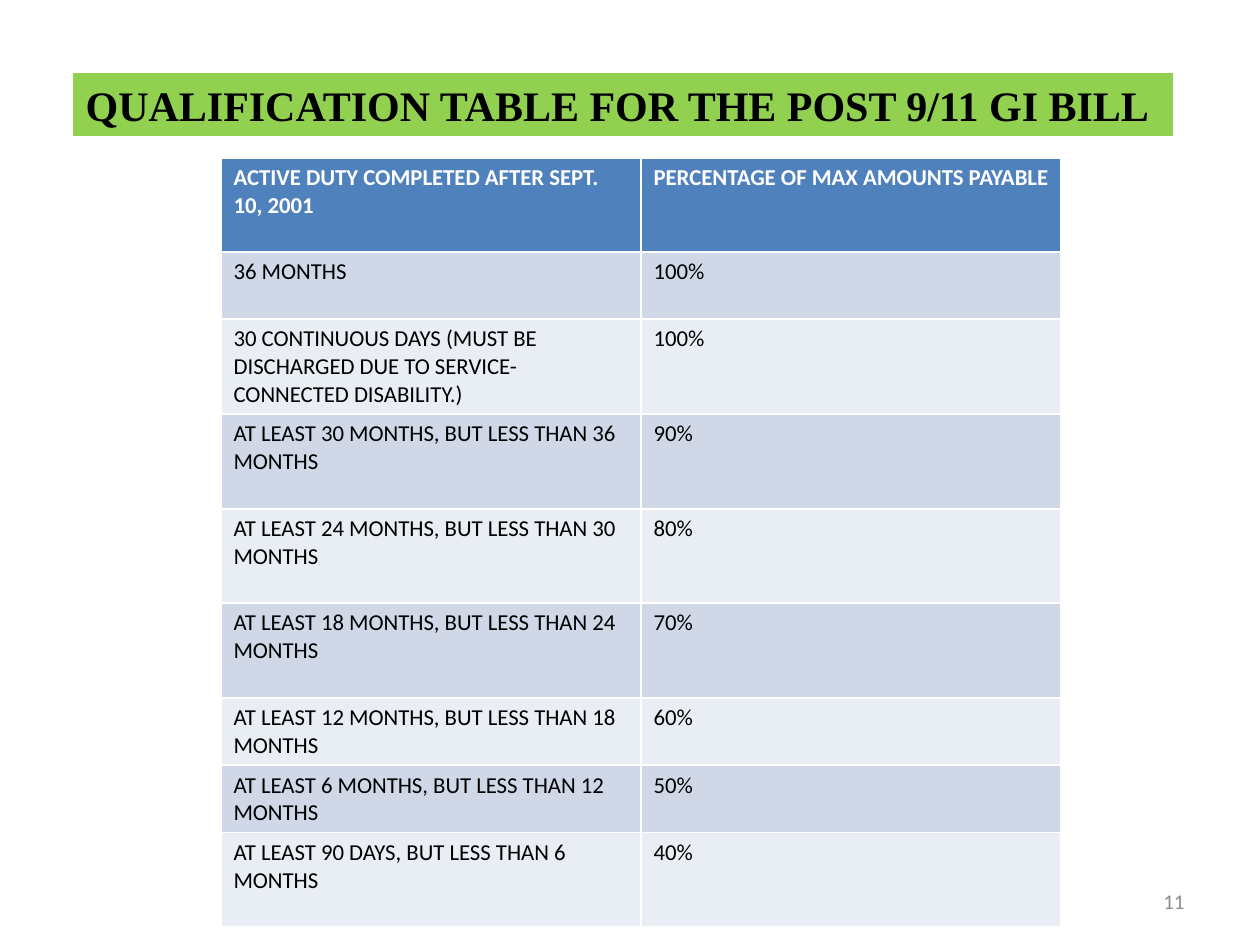
from dataclasses import dataclass

from pptx import Presentation
from pptx.dml.color import RGBColor
from pptx.enum.text import MSO_ANCHOR, MSO_AUTO_SIZE, PP_ALIGN
from pptx.util import Pt

LEFT, RIGHT = PP_ALIGN.LEFT, PP_ALIGN.RIGHT
TOP, MIDDLE = MSO_ANCHOR.TOP, MSO_ANCHOR.MIDDLE
NO_AUTOFIT = MSO_AUTO_SIZE.NONE

PX_PER_INCH = 126
TITLE_ONLY_LAYOUT = 5
COLORS = {
    "title_band": "92D050",
    "header": "4F81BD",
    "odd_row": "D0D8E8",
    "even_row": "E9EDF4",
    "text": "000000",
    "header_text": "FFFFFF",
    "page_number": "8C8C8C",
}


@dataclass(frozen=True)
class Box:
    left: int
    top: int
    width: int
    height: int

    def emu(self) -> tuple[int, ...]:
        return tuple(px(n) for n in (self.left, self.top, self.width, self.height))


@dataclass(frozen=True)
class Tier:
    service: str
    percentage: str
    height: int


TITLE_BOX = Box(73, 73, 1100, 63)
TABLE_BOX = Box(221, 158, 840, 768)
PAGE_NUMBER_BOX = Box(903, 876, 294, 50)

TIERS = [
    Tier("ACTIVE DUTY COMPLETED AFTER SEPT. 10, 2001",
         "PERCENTAGE OF MAX AMOUNTS PAYABLE", 94),
    Tier("36 MONTHS", "100%", 67),
    Tier("30 CONTINUOUS DAYS (MUST BE DISCHARGED DUE TO "
         "SERVICE-CONNECTED DISABILITY.)", "100%", 95),
    Tier("AT LEAST 30 MONTHS, BUT LESS THAN 36 MONTHS", "90%", 95),
    Tier("AT LEAST 24 MONTHS, BUT LESS THAN 30 MONTHS", "80%", 94),
    Tier("AT LEAST 18 MONTHS, BUT LESS THAN 24 MONTHS", "70%", 95),
    Tier("AT LEAST 12 MONTHS, BUT LESS THAN 18 MONTHS", "60%", 67),
    Tier("AT LEAST 6 MONTHS, BUT LESS THAN 12 MONTHS", "50%", 67),
    Tier("AT LEAST 90 DAYS, BUT LESS THAN 6 MONTHS", "40%", 94),
]


def px(length: int) -> int:
    """Turn pixels into EMU."""
    return round(length * 914400 / PX_PER_INCH)


def set_fill(target, color: str) -> None:
    target.fill.solid()
    target.fill.fore_color.rgb = RGBColor.from_string(COLORS[color])


def write(frame, text: str, size: int, color: str, font: str = "Calibri",
          bold: bool = False, align=LEFT) -> None:
    frame.text = text
    paragraph = frame.paragraphs[0]
    paragraph.alignment = align
    paragraph.font.name = font
    paragraph.font.size = Pt(size)
    paragraph.font.bold = bold
    paragraph.font.color.rgb = RGBColor.from_string(COLORS[color])


def add_title(slide) -> None:
    title = slide.shapes.title
    title.left, title.top, title.width, title.height = TITLE_BOX.emu()
    set_fill(title, "title_band")
    frame = title.text_frame
    frame.word_wrap = False
    frame.auto_size = NO_AUTOFIT
    frame.vertical_anchor = TOP
    write(frame, "QUALIFICATION TABLE FOR THE POST 9/11 GI BILL", 24, "text",
          font="Times New Roman", bold=True)


def add_qualification_table(slide) -> None:
    table = slide.shapes.add_table(len(TIERS), 2, *TABLE_BOX.emu()).table
    for index, tier in enumerate(TIERS):
        is_header = index == 0
        band = "header" if is_header else "odd_row" if index % 2 else "even_row"
        table.rows[index].height = px(tier.height)
        for column, text in enumerate((tier.service, tier.percentage)):
            cell = table.cell(index, column)
            set_fill(cell, band)
            write(cell.text_frame, text, 13,
                  "header_text" if is_header else "text", bold=is_header)


def add_page_number(slide) -> None:
    frame = slide.shapes.add_textbox(*PAGE_NUMBER_BOX.emu()).text_frame
    frame.word_wrap = True
    frame.vertical_anchor = MIDDLE
    write(frame, "11", 12, "page_number", align=RIGHT)


def main() -> None:
    presentation = Presentation()
    presentation.slide_width, presentation.slide_height = px(1260), px(945)
    slide = presentation.slides.add_slide(
        presentation.slide_layouts[TITLE_ONLY_LAYOUT])
    add_page_number(slide)
    add_title(slide)
    add_qualification_table(slide)
    presentation.save("out.pptx")


if __name__ == "__main__":
    main()
